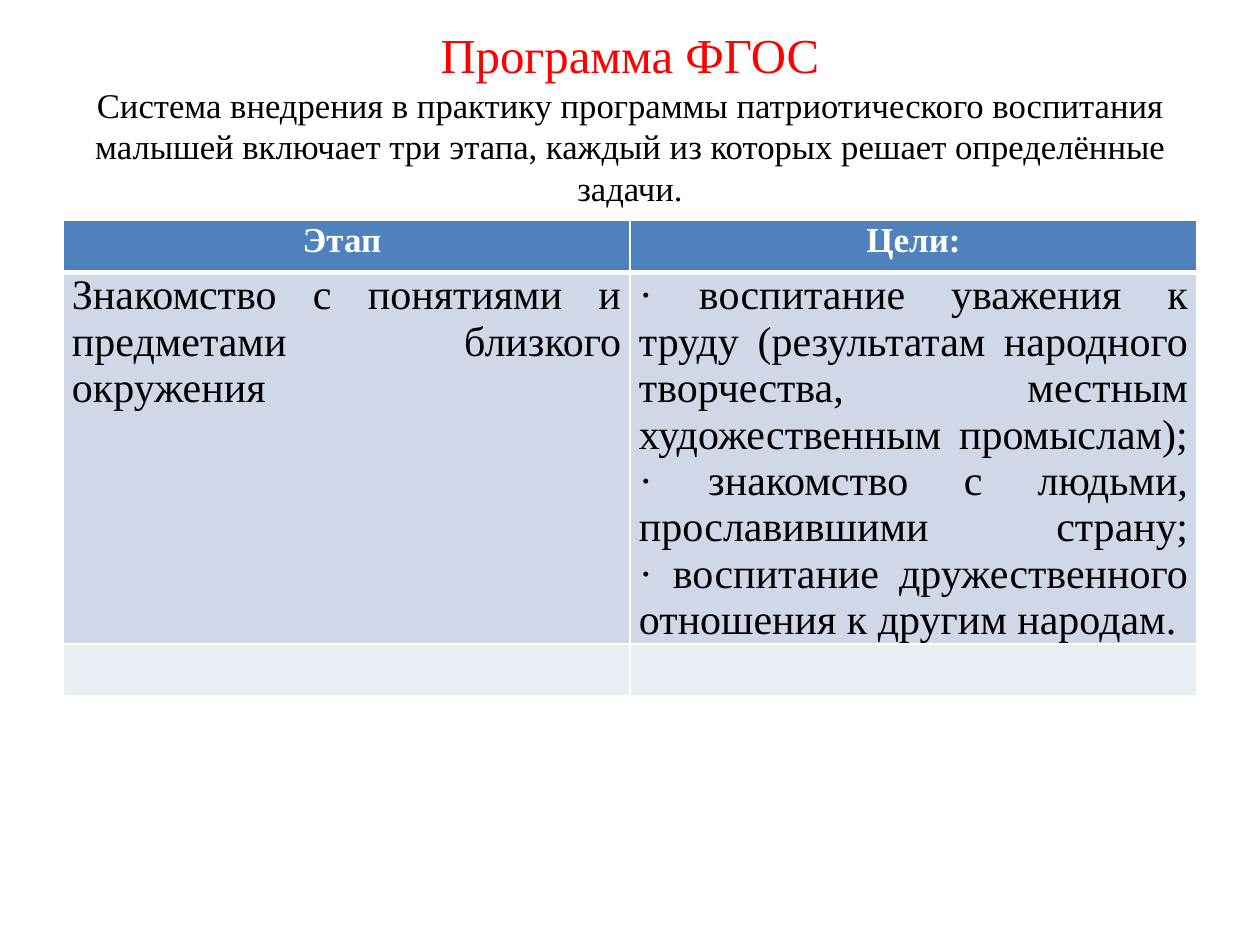
from lxml.etree import SubElement
from pptx import Presentation
from pptx.dml.color import RGBColor
from pptx.enum.text import MSO_ANCHOR, MSO_AUTO_SIZE, PP_ALIGN
from pptx.oxml.ns import qn
from pptx.util import Cm, Pt

COLORS = {"red": "FF0000", "black": "000000", "white": "FFFFFF",
          "head": "4F81BD", "dark": "D0D8E8", "light": "E9EDF4"}
FONT = "Times New Roman"

TITLE = "Программа ФГОС"
INTRO = ("Система внедрения в практику программы патриотического воспитания "
         "малышей включает три этапа, каждый из которых решает определённые задачи.")
STAGE = "Знакомство с понятиями и предметами близкого окружения"
GOALS = [
    "· воспитание уважения к труду (результатам народного творчества, "
    "местным художественным промыслам);",
    "· знакомство с людьми, прославившими страну;",
    "· воспитание дружественного отношения к другим народам.",
]
ROWS = [
    {"cells": [["Этап "], ["Цели:"]], "fill": "head", "top": 1, "bottom": 3,
     "text": {"size": 20, "color": "white", "bold": True}},
    {"cells": [[STAGE], GOALS], "fill": "dark", "top": 3, "bottom": 1,
     "text": {"size": 24, "align": PP_ALIGN.JUSTIFY}},
    {"cells": [[], []], "fill": "light", "top": 1, "bottom": 1, "text": {}},
]


def rgb(name):
    return RGBColor.from_string(COLORS[name])


def write(par, lines, size=20, color="black", bold=False, align=PP_ALIGN.CENTER):
    """Add the lines to one paragraph, with line breaks between them."""
    par.alignment = align
    for i, line in enumerate(lines):
        if i:
            par.add_line_break()
        run = par.add_run()
        run.text = line
        font = run.font
        font.name, font.size, font.bold = FONT, Pt(size), bold
        font.color.rgb = rgb(color)


def border(cell, **widths):
    """Draw white cell edges; widths are points, keyed by edge tag."""
    props = cell._tc.get_or_add_tcPr()
    for tag, width in widths.items():
        line = SubElement(props, qn(f"a:{tag}"), w=str(Pt(width)))
        fill = SubElement(line, qn("a:solidFill"))
        SubElement(fill, qn("a:srgbClr"), val=COLORS["white"])


def main():
    prs = Presentation()
    prs.slide_width, prs.slide_height = Cm(25.4), Cm(19.05)
    slide = prs.slides.add_slide(prs.slide_layouts[5])
    left, width = Cm(1.27), Cm(22.86)

    title = slide.shapes.title
    title.left, title.top, title.width, title.height = left, Cm(0.76), width, Cm(3.18)
    frame = title.text_frame
    frame.word_wrap = True
    frame.auto_size = MSO_AUTO_SIZE.NONE
    frame.vertical_anchor = MSO_ANCHOR.MIDDLE
    par = frame.paragraphs[0]
    write(par, [TITLE], size=27.9, color="red")
    par.add_line_break()
    write(par, [INTRO], size=19.8)

    grid = slide.shapes.add_table(len(ROWS), 2, left, Cm(4.45), width, Cm(10.19))
    table = grid.table
    for r, row in enumerate(ROWS):
        table.rows[r].height = Cm(1.04)
        for c, lines in enumerate(row["cells"]):
            cell = table.cell(r, c)
            border(cell, lnL=1, lnR=1, lnT=row["top"], lnB=row["bottom"])
            cell.fill.solid()
            cell.fill.fore_color.rgb = rgb(row["fill"])
            if lines:
                cell.margin_left = cell.margin_right = Cm(0.18)
                cell.margin_top = cell.margin_bottom = 0
                par = cell.text_frame.paragraphs[0]
                par.space_after = Pt(5)
                write(par, lines, **row["text"])
    table.cell(1, 1).vertical_anchor = MSO_ANCHOR.BOTTOM
    grid.height = Cm(10.19)

    prs.save("out.pptx")


if __name__ == "__main__":
    main()
